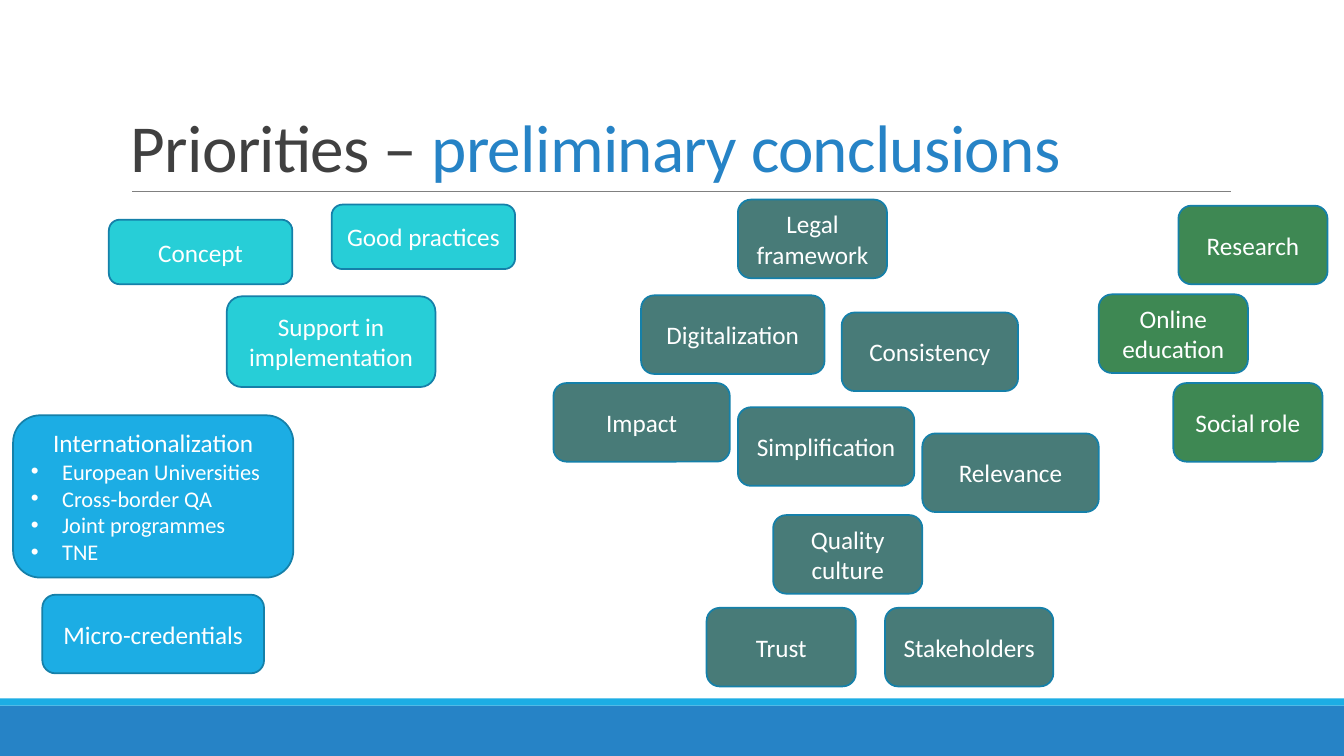
from lxml import etree
from pptx import Presentation
from pptx.dml.color import RGBColor
from pptx.enum.shapes import MSO_CONNECTOR, MSO_SHAPE
from pptx.enum.text import MSO_ANCHOR, PP_ALIGN
from pptx.oxml.ns import qn
from pptx.util import Inches, Pt

RECT, ROUND = MSO_SHAPE.RECTANGLE, MSO_SHAPE.ROUNDED_RECTANGLE
LINE = MSO_CONNECTOR.STRAIGHT
MID, LOW = MSO_ANCHOR.MIDDLE, MSO_ANCHOR.BOTTOM
MAIN, LEFT = PP_ALIGN.CENTER, PP_ALIGN.LEFT

COLORS = {
    "ink": "404040", "blue": "2683C6", "sky": "1CADE4", "aqua": "27CED7",
    "teal": "487B78", "green": "3E8853", "edge": "1580A9",
    "rule": "808080", "white": "FFFFFF",
}


class Deck:
    """Style and current slide; lengths are columns and rows, ten to the inch."""

    font = "Calibri"
    cell = Inches(0.1)
    indent = Inches(0.31)

    def __init__(self, cols, rows):
        self.prs = Presentation()
        self.prs.slide_width, self.prs.slide_height = self.grid(cols, rows)
        self.slide = self.prs.slides.add_slide(self.prs.slide_layouts[6])

    def grid(self, *spans):
        return [round(span * self.cell) for span in spans]

    def color(self, name):
        return RGBColor.from_string(COLORS[name])

    def run(self, para, text, size, color):
        run = para.add_run()
        run.text = text
        run.font.name, run.font.size = self.font, Pt(size)
        run.font.color.rgb = self.color(color)
        return run

    def shape(self, kind, fill, *spot):
        shape = self.slide.shapes.add_shape(kind, *self.grid(*spot))
        shape.shadow.inherit = False
        shape.fill.solid()
        shape.fill.fore_color.rgb = self.color(fill)
        shape.line.fill.background()
        return shape

    def rule(self, x1, x2, y):
        line = self.slide.shapes.add_connector(LINE, *self.grid(x1, y, x2, y))
        line.line.color.rgb = self.color("rule")
        line.line.width = Pt(0.5)
        etree.SubElement(line._element.spPr, qn("a:effectLst"))

    def title(self, parts, *spot):
        frame = self.slide.shapes.add_textbox(*self.grid(*spot)).text_frame
        frame.word_wrap, frame.vertical_anchor = True, LOW
        para = frame.paragraphs[0]
        para.line_spacing = 0.85
        for text, color in parts:
            run = self.run(para, text, 48, color)
            run.font._element.set("spc", "-50")

    def card(self, fill, text, *spot, points=()):
        shape = self.shape(ROUND, fill, *spot)
        shape.line.color.rgb = self.color("edge")
        shape.line.width = Pt(1.25)
        frame = shape.text_frame
        frame.word_wrap, frame.vertical_anchor = True, MID
        head = frame.paragraphs[0]
        head.alignment = MAIN
        self.run(head, text, 18, "white")
        for point in points:
            self.bullet(frame.add_paragraph(), point)

    def bullet(self, para, text):
        para.alignment = LEFT
        props = para._p.get_or_add_pPr()
        props.set("marL", str(self.indent))
        props.set("indent", str(-self.indent))
        etree.SubElement(props, qn("a:buFont"), typeface="Arial")
        etree.SubElement(props, qn("a:buChar"), char="•")
        self.run(para, text, 16, "white")


def main():
    wide, high = 133.33, 75
    deck = Deck(wide, high)

    # Footer bands and title
    deck.shape(RECT, "blue", 0, 70, wide, 5)
    deck.shape(RECT, "sky", 0, 69.3, wide, 0.7)
    deck.rule(13.1, 122.1, 19)
    deck.title([("Priorities – ", "ink"), ("preliminary conclusions", "blue")],
               12, 3.1, 110, 15.9)

    # Aqua cards: guidance
    deck.card("aqua", "Concept", 10.8, 21.8, 18.2, 6.4)
    deck.card("aqua", "Support in implementation", 22.5, 29.4, 20.7, 9)
    deck.card("aqua", "Good practices", 32.9, 20.3, 18.2, 6.4)

    # Sky cards: international topics
    tall, slim, mid, broad = 7.8, 14.8, 17.5, 18.2
    deck.card("sky", "Micro-credentials", 4.2, 59, 22, tall)
    deck.card("sky", "Internationalization", 1.3, 41.2, 27.8, 16.1,
              points=["European Universities", "Cross-border QA",
                      "Joint programmes", "TNE"])

    # Teal and green cards share one height
    topics = {
        "teal": [
            ("Legal framework", 73.2, 19.8, slim),
            ("Digitalization", 63.6, 29.3, broad),
            ("Consistency", 83.5, 31, mid),
            ("Impact", 54.9, 38, mid),
            ("Simplification", 73.2, 40.4, mid),
            ("Relevance", 91.5, 43, mid),
            ("Quality culture", 76.7, 51.1, slim),
            ("Trust", 70.1, 60.3, slim),
            ("Stakeholders", 87.8, 60.3, 16.7),
        ],
        "green": [
            ("Research", 116.9, 20.4, slim),
            ("Online education", 109, 29.2, slim),
            ("Social role", 116.4, 38, slim),
        ],
    }
    for fill, cards in topics.items():
        for text, x, y, width in cards:
            deck.card(fill, text, x, y, width, tall)

    deck.prs.save("out.pptx")


if __name__ == "__main__":
    main()
